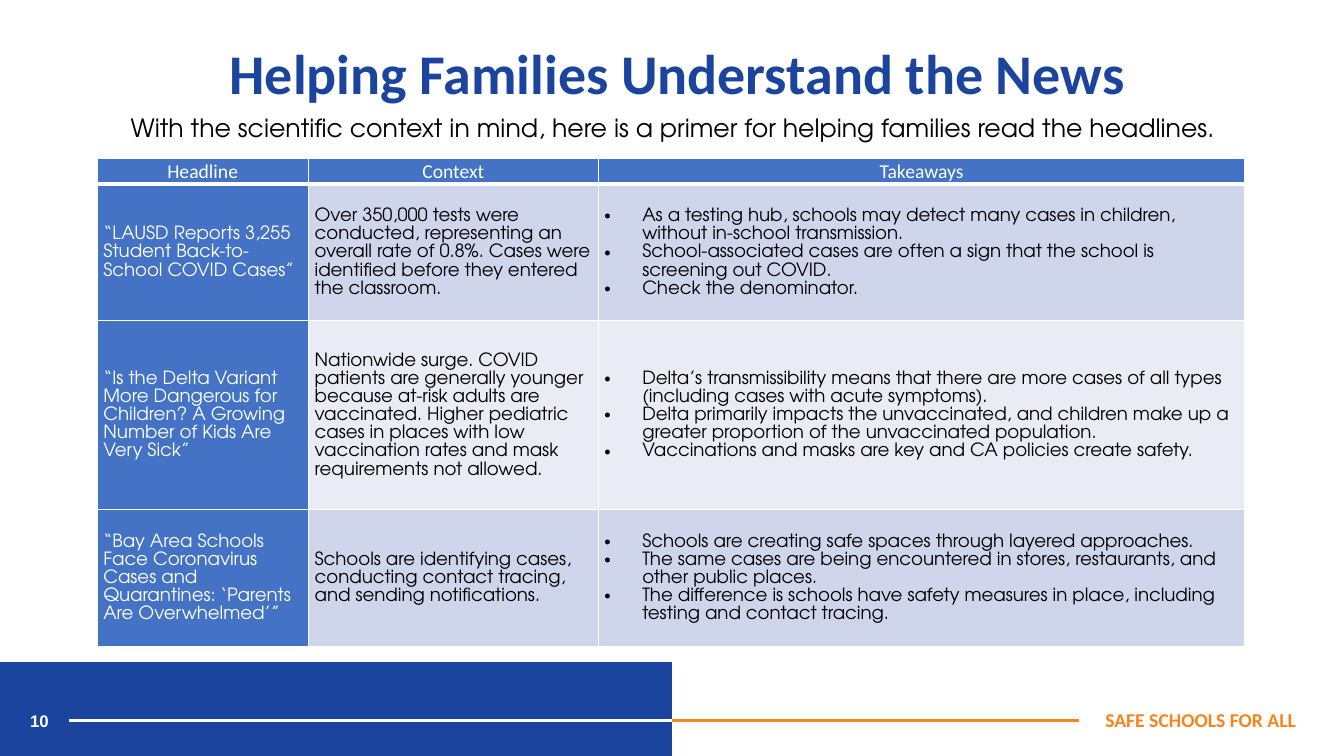
from lxml.etree import SubElement
from pptx import Presentation
from pptx.dml.color import RGBColor
from pptx.enum.shapes import MSO_CONNECTOR, MSO_SHAPE
from pptx.enum.text import MSO_ANCHOR, MSO_AUTO_SIZE, PP_ALIGN
from pptx.oxml.ns import qn
from pptx.util import Pt

HUES = {
    "navy": "1A449D", "orange": "F6851F", "white": "FFFFFF", "black": "000000",
    "blue": "4472C4", "mid": "CFD5EA", "pale": "E9EBF5",
}
INK = {key: RGBColor.from_string(hue) for key, hue in HUES.items()}
GEO = "TeX Gyre Adventor"


def write(par, text, hue, align=PP_ALIGN.LEFT, **look):
    par.alignment = align
    run = par.add_run()
    run.text = text
    for key, value in look.items():
        setattr(run.font, key, value)
    run.font.color.rgb = INK[hue]


def edge(cell, side, width):
    line = SubElement(cell._tc.get_or_add_tcPr(), qn("a:" + side), w=str(Pt(width)))
    fill = SubElement(line, qn("a:solidFill"))
    SubElement(fill, qn("a:srgbClr"), val=HUES["white"])


deck = Presentation()
deck.slide_width, deck.slide_height = Pt(960), Pt(540)
slide = deck.slides.add_slide(deck.slide_layouts[5])
shapes = slide.shapes

# Footer band and rules
band = shapes.add_shape(MSO_SHAPE.RECTANGLE, Pt(0), Pt(473), Pt(480), Pt(67))
band.shadow.inherit = False
band.fill.solid()
band.fill.fore_color.rgb = INK["navy"]
band.line.fill.background()

for start, end, hue in [(49, 759, "white"), (480, 771, "orange")]:
    rule = shapes.add_connector(
        MSO_CONNECTOR.STRAIGHT, Pt(start), Pt(514.6), Pt(end), Pt(514.6))
    rule.line.color.rgb = INK[hue]
    rule.line.width = Pt(2.25)
    SubElement(rule._element.spPr, qn("a:effectLst"))

# Title
title = shapes.title
title.left, title.top, title.width, title.height = Pt(69), Pt(24), Pt(829.5), Pt(55.4)
title.text_frame.auto_size = MSO_AUTO_SIZE.NONE
write(title.text_frame.paragraphs[0], "Helping Families Understand the News", "navy",
      PP_ALIGN.CENTER, name="Calibri", size=Pt(40), bold=True)

# Subtitle, page number and footer text
NOTES = [
    ((70, 76.3, 821, 29),
     "With the scientific context in mind, here is a primer for helping families "
     "read the headlines.",
     "black", PP_ALIGN.CENTER, {"name": GEO, "size": Pt(18)}),
    ((14.4, 500.4, 68.4, 28.8), "10", "white", PP_ALIGN.LEFT,
     {"name": "Arial", "size": Pt(12), "bold": True}),
    ((728, 502, 205, 24.5), "SAFE SCHOOLS FOR ALL", "orange", PP_ALIGN.RIGHT,
     {"name": "Calibri", "size": Pt(14), "bold": True}),
]
for place, text, hue, align, look in NOTES:
    frame = shapes.add_textbox(*map(Pt, place)).text_frame
    frame.word_wrap = True
    frame.vertical_anchor = MSO_ANCHOR.MIDDLE
    write(frame.paragraphs[0], text, hue, align, **look)

# Table of headlines: each cell is a list of paragraphs
ROWS = [
    [["Headline"], ["Context"], ["Takeaways"]],
    [["“LAUSD Reports 3,255 Student Back-to-School COVID Cases”"],
     ["Over 350,000 tests were conducted, representing an overall rate of 0.8%. "
      "Cases were identified before they entered the classroom."],
     ["As a testing hub, schools may detect many cases in children, without "
      "in-school transmission.",
      "School-associated cases are often a sign that the school is screening out COVID.",
      "Check the denominator."]],
    [["“Is the Delta Variant More Dangerous for Children? A Growing Number of Kids "
      "Are Very Sick”"],
     ["Nationwide surge. COVID patients are generally younger because at-risk adults "
      "are vaccinated. Higher pediatric cases in places with low vaccination rates "
      "and mask requirements not allowed."],
     ["Delta’s transmissibility means that there are more cases of all types "
      "(including cases with acute symptoms).",
      "Delta primarily impacts the unvaccinated, and children make up a greater "
      "proportion of the unvaccinated population.",
      "Vaccinations and masks are key and CA policies create safety."]],
    [["“Bay Area Schools Face Coronavirus Cases and Quarantines: ‘Parents Are "
      "Overwhelmed’”"],
     ["Schools are identifying cases, conducting contact tracing, and sending "
      "notifications."],
     ["Schools are creating safe spaces through layered approaches.",
      "The same cases are being encountered in stores, restaurants, and other "
      "public places.",
      "The difference is schools have safety measures in place, including testing "
      "and contact tracing."]],
]
WIDTHS = [151, 207, 462]
HEIGHTS = [17.5, 97.9, 134.6, 97.9]
grid = shapes.add_table(4, 3, Pt(69.3), Pt(113.3), Pt(sum(WIDTHS)), Pt(sum(HEIGHTS))).table
for col, width in zip(grid.columns, WIDTHS):
    col.width = Pt(width)
for row, height in zip(grid.rows, HEIGHTS):
    row.height = Pt(height)

for r, row in enumerate(ROWS):
    for c, lines in enumerate(row):
        cell = grid.cell(r, c)
        head = r == 0
        dark = head or c == 0
        cell.margin_left = cell.margin_right = Pt(4.5)
        cell.margin_top = cell.margin_bottom = Pt(0)
        cell.vertical_anchor = MSO_ANCHOR.TOP if head else MSO_ANCHOR.MIDDLE
        for side in ("lnL", "lnR", "lnT", "lnB"):
            edge(cell, side, 3 if head and side == "lnB" else 1)
        cell.fill.solid()
        cell.fill.fore_color.rgb = INK["blue" if dark else "mid" if r % 2 else "pale"]

        frame = cell.text_frame
        for n, text in enumerate(lines):
            par = frame.add_paragraph() if n else frame.paragraphs[0]
            par.line_spacing = 1.07
            write(par, text, "white" if dark else "black",
                  PP_ALIGN.CENTER if head else PP_ALIGN.LEFT,
                  name="Calibri" if head else GEO,
                  size=Pt(14 if head else 13), bold=False)
            if c == 2 and not head:
                props = par._p.get_or_add_pPr()
                props.set("marL", str(Pt(27)))
                props.set("indent", str(Pt(-27)))
                tint = SubElement(props, qn("a:buClr"))
                SubElement(tint, qn("a:srgbClr"), val=HUES["black"])
                SubElement(props, qn("a:buFont"), typeface="Arial")
                SubElement(props, qn("a:buChar"), char="•")

deck.save("out.pptx")
